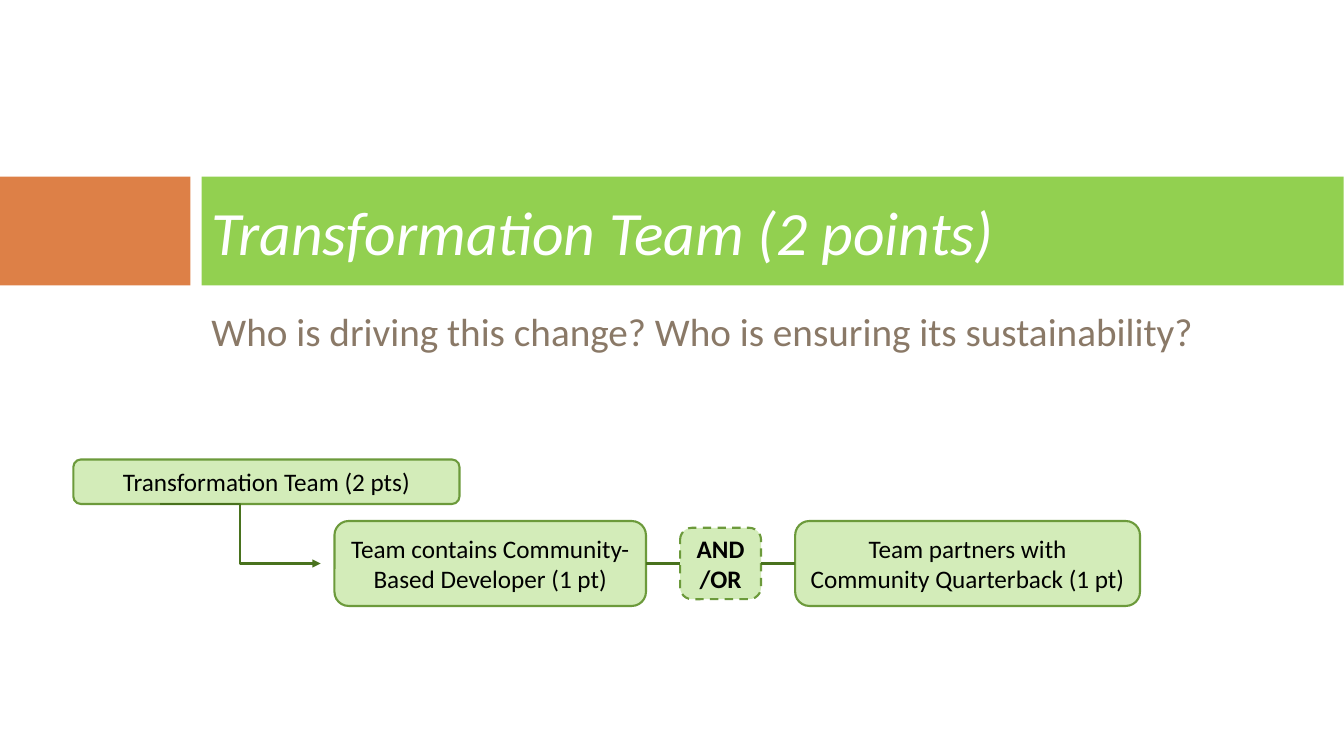
"""Build the Transformation Team slide with its points diagram."""
from dataclasses import dataclass, field

from lxml.etree import SubElement as Sub
from pptx import Presentation
from pptx.dml.color import RGBColor as Rgb
from pptx.enum.dml import MSO_LINE as Dash
from pptx.enum.shapes import MSO_CONNECTOR as Conn, MSO_SHAPE as Form
from pptx.enum.text import MSO_ANCHOR as Anchor, PP_ALIGN as Align
from pptx.oxml.ns import qn
from pptx.util import Cm, Pt

HUES = {"orange": "DD8047", "green": "92D050", "pale": "D3ECB9", "edge": "6C9A3B",
        "link": "49721E", "taupe": "8A7967", "white": "FFFFFF", "black": "000000"}
LABEL = {"size": Pt(18)}


@dataclass
class Band:
    left: float
    width: float
    hue: str


@dataclass
class Text:
    words: str
    top: float
    width: float
    height: float
    hue: str
    frame: dict
    para: dict
    font: dict


@dataclass
class Box:
    words: str
    left: float
    top: float
    width: float
    height: float
    font: dict = field(default_factory=lambda: LABEL)
    line: dict = field(default_factory=dict)


@dataclass
class Link:
    kind: Conn
    ends: tuple[float, float, float, float]
    arrow: bool = False


BAND_TOP, BAND_TALL, TEXT_LEFT = 4.45, 2.74, 5.08
MID = 14.2
BANDS = [Band(0, 4.8, "orange"), Band(TEXT_LEFT, 28.78, "green")]
TEXTS = [
    Text("Who is driving this change? Who is ensuring its sustainability?",
         7.62, 26.39, 4.65, "taupe", {"vertical_anchor": Anchor.TOP},
         {"space_before": Pt(7)}, {"size": Pt(28)}),
    Text("Transformation Team (2 points)", BAND_TOP, 28.22, BAND_TALL, "white",
         {"vertical_anchor": Anchor.MIDDLE}, {}, {"size": Pt(44), "italic": True}),
]
BOXES = [
    Box("Team contains Community-Based Developer (1 pt)", 8.43, 13.13, 7.85, 2.14),
    Box("Team partners with Community Quarterback (1 pt)", 20.04, 13.13, 8.69, 2.14),
    Box("Transformation Team (2 pts)", 1.85, 11.58, 9.73, 1.12),
    Box("AND/OR", 17.14, 13.3, 2.04, 1.8, LABEL | {"bold": True},
        {"dash_style": Dash.DASH}),
]
LINKS = [
    Link(Conn.STRAIGHT, (16.28, MID, 17.14, MID)),
    Link(Conn.STRAIGHT, (19.18, MID, 20.04, MID)),
    Link(Conn.ELBOW, (4.04, 12.7, 8.08, MID), True),
]


def style(item, form: dict) -> None:
    for key, val in form.items():
        setattr(item, key, val)


def tint(name: str) -> Rgb:
    return Rgb.from_string(HUES[name])


def paint(fill, hue: str) -> None:
    fill.solid()
    fill.fore_color.rgb = tint(hue)


def write(frame, words: str, hue: str, form: dict, para: dict, font: dict) -> None:
    style(frame, {"word_wrap": True} | form)
    line = frame.paragraphs[0]
    style(line, para)
    run = line.add_run()
    run.text = words
    style(run.font, {"name": "Calibri"} | font)
    run.font.color.rgb = tint(hue)


def draw_band(shapes, band: Band) -> None:
    rect = shapes.add_shape(Form.RECTANGLE, Cm(band.left), Cm(BAND_TOP),
                            Cm(band.width), Cm(BAND_TALL))
    rect.shadow.inherit = False
    paint(rect.fill, band.hue)
    rect.line.fill.background()


def draw_text(shapes, text: Text) -> None:
    area = shapes.add_textbox(Cm(TEXT_LEFT), Cm(text.top), Cm(text.width), Cm(text.height))
    write(area.text_frame, text.words, text.hue, text.frame, text.para, text.font)


def draw_box(shapes, box: Box) -> None:
    node = shapes.add_shape(Form.ROUNDED_RECTANGLE, Cm(box.left), Cm(box.top),
                            Cm(box.width), Cm(box.height))
    node.shadow.inherit = False
    paint(node.fill, "pale")
    paint(node.line.fill, "edge")
    style(node.line, {"width": Pt(1.5)} | box.line)
    write(node.text_frame, box.words, "black", {"vertical_anchor": Anchor.MIDDLE},
          {"alignment": Align.CENTER}, box.font)


def draw_link(shapes, link: Link) -> None:
    wire = shapes.add_connector(link.kind, *map(Cm, link.ends))
    paint(wire.line.fill, "link")
    wire.line.width = Pt(1.5)
    if link.arrow:
        Sub(wire.line._get_or_add_ln(), qn("a:tailEnd"), type="triangle")
    Sub(wire._element.spPr, qn("a:effectLst"))


def main() -> None:
    deck = Presentation()
    style(deck, {"slide_width": Cm(33.87), "slide_height": Cm(19.05)})
    shapes = deck.slides.add_slide(deck.slide_layouts[6]).shapes
    for draw, items in ((draw_band, BANDS), (draw_text, TEXTS),
                        (draw_box, BOXES), (draw_link, LINKS)):
        for item in items:
            draw(shapes, item)
    deck.save("out.pptx")


if __name__ == "__main__":
    main()
